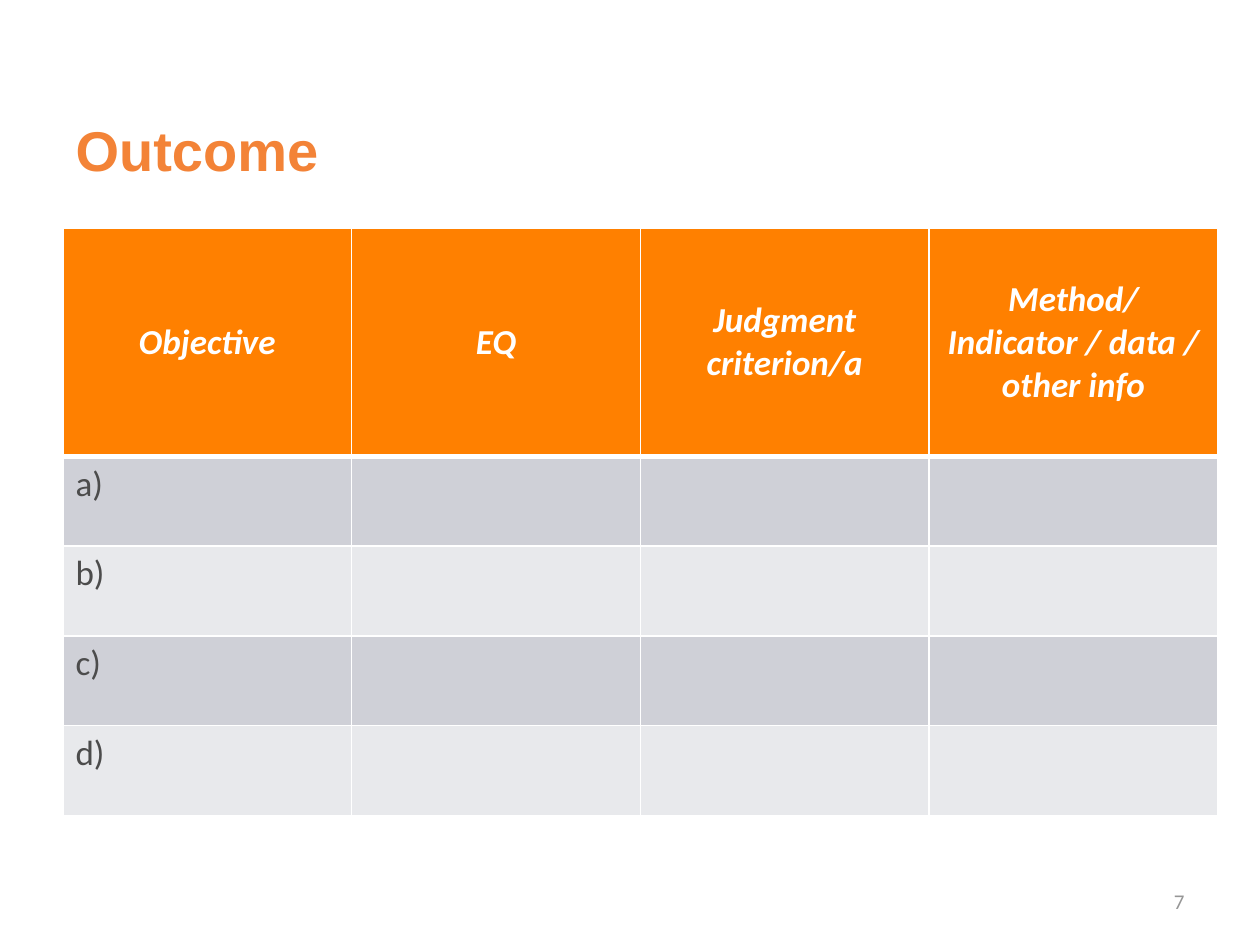
from lxml import etree
from pptx import Presentation
from pptx.dml.color import RGBColor
from pptx.enum import text
from pptx.oxml import ns
from pptx.util import Pt

HEADS = [["Objective"], ["EQ"], ["Judgment", "criterion/a"],
         ["Method/ Indicator / data / other info"]]
ROWS = ["a)", "b)", "c)", "d)"]
BANDS = ["CFD0D7", "E8E9EC"]
ALIGN = text.PP_ALIGN
MIDDLE = text.MSO_ANCHOR.MIDDLE


def color(code):
    return RGBColor.from_string(code)


def write(frame, lines, size, code, font="Calibri", align=ALIGN.LEFT,
          bold=False, slant=False):
    for i, line in enumerate(lines):
        para = frame.add_paragraph() if i else frame.paragraphs[0]
        para.alignment = align
        run = para.add_run()
        run.text = line
        face = run.font
        face.name, face.size = font, Pt(size)
        face.bold, face.italic = bold, slant
        face.color.rgb = color(code)


def edge(cell, side, width):
    props = cell._tc.get_or_add_tcPr()
    line = etree.SubElement(props, ns.qn("a:ln" + side), w=str(Pt(width)))
    fill = etree.SubElement(line, ns.qn("a:solidFill"))
    etree.SubElement(fill, ns.qn("a:srgbClr"), val="FFFFFF")


def style(cell, code, top=1, base=1):
    for side, width in zip("LRTB", (1, 1, top, base)):
        edge(cell, side, width)
    cell.fill.solid()
    cell.fill.fore_color.rgb = color(code)


def add_title(slide):
    title = slide.shapes.title
    title.left, title.top = Pt(36), Pt(40)
    title.width, title.height = Pt(648), Pt(90)
    title.text_frame.vertical_anchor = MIDDLE
    write(title.text_frame, ["Outcome"], 32, "F38337", "Arial", bold=True)


def add_grid(slide):
    grid = slide.shapes.add_table(len(ROWS) + 1, len(HEADS), Pt(36),
                                  Pt(130.5), Pt(660), Pt(335.5)).table
    for col in grid.columns:
        col.width = Pt(165)
    for i, row in enumerate(grid.rows):
        row.height = Pt(51.3 if i else 130.3)
    for i, lines in enumerate(HEADS):
        cell = grid.cell(0, i)
        style(cell, "FF8000", base=3)
        cell.vertical_anchor = MIDDLE
        write(cell.text_frame, lines, 20, "FFFFFF", align=ALIGN.CENTER,
              bold=True, slant=True)
    for i, label in enumerate(ROWS, 1):
        for j in range(len(HEADS)):
            style(grid.cell(i, j), BANDS[(i - 1) % 2], top=3 if i == 1 else 1)
        write(grid.cell(i, 0).text_frame, [label], 20, "4C4C4C")


def add_number(slide):
    box = slide.shapes.add_textbox(Pt(516), Pt(500.5), Pt(168), Pt(28.75))
    frame = box.text_frame
    frame.word_wrap = True
    frame.vertical_anchor = MIDDLE
    write(frame, ["7"], 12, "969696", align=ALIGN.RIGHT)


def main():
    deck = Presentation()
    deck.slide_width, deck.slide_height = Pt(720), Pt(540)
    slide = deck.slides.add_slide(deck.slide_layouts[5])
    add_title(slide)
    add_number(slide)
    add_grid(slide)
    deck.save("out.pptx")


if __name__ == "__main__":
    main()
